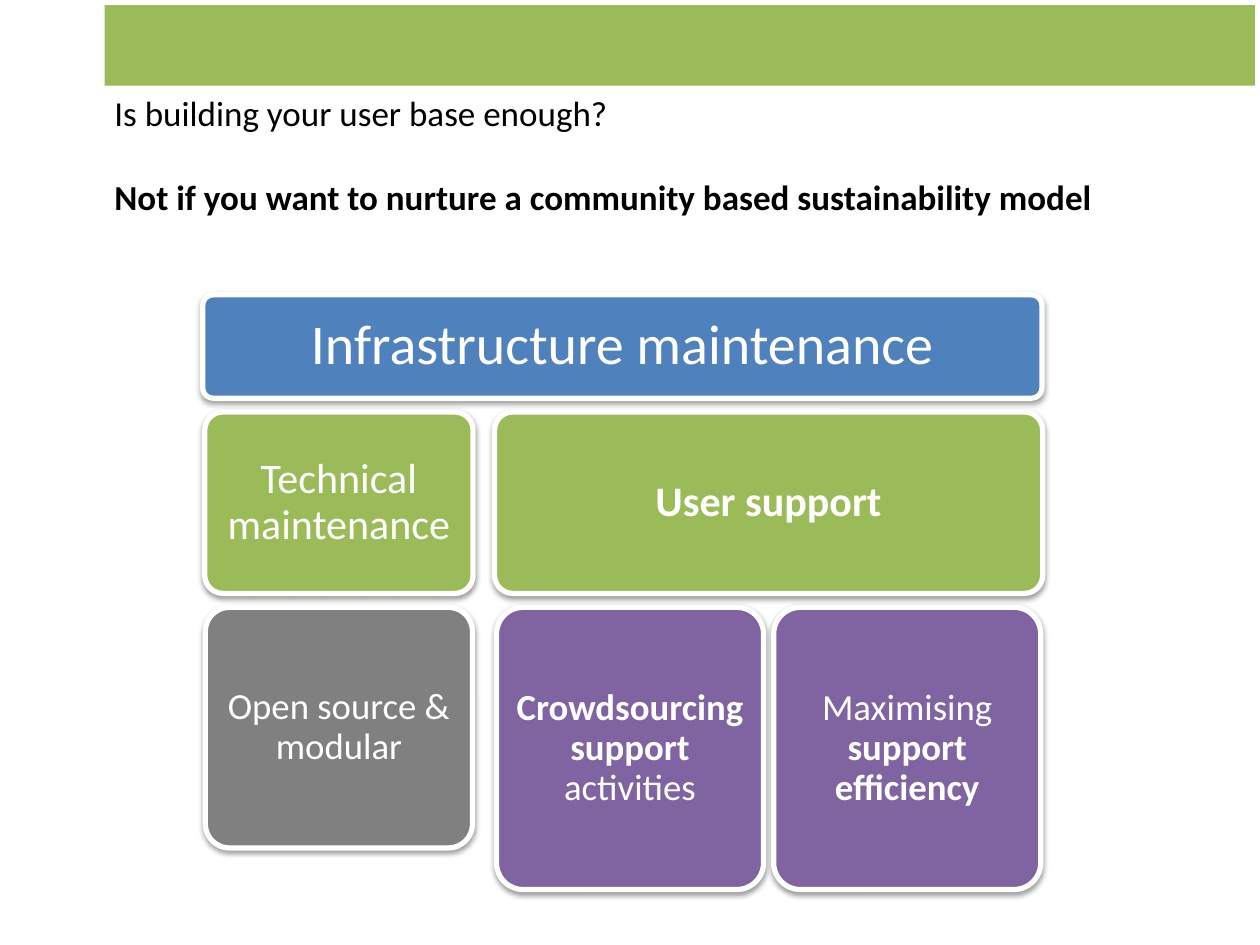
from lxml import etree
from pptx import Presentation
from pptx.dml.color import RGBColor
from pptx.enum.shapes import MSO_SHAPE
from pptx.enum.text import MSO_ANCHOR, MSO_AUTO_SIZE, PP_ALIGN
from pptx.oxml.ns import qn
from pptx.util import Inches, Pt

RECT, ROUND = MSO_SHAPE.RECTANGLE, MSO_SHAPE.ROUNDED_RECTANGLE
MIDDLE, CENTER = MSO_ANCHOR.MIDDLE, PP_ALIGN.CENTER
FONT = "Calibri"
WHITE, BLACK, BLUE, GREEN = "FFFFFF", "000000", "4F81BD", "9BBB59"
GRAY, PURPLE = "808080", "8064A2"

# Content: runs are (text, bold)
BAND = (0.83, 0.04, 9.13, 0.64)
INTRO = [
    ("Is building your user base enough?", False),
    ("Not if you want to nurture a community based sustainability model", True),
]
TOPS = [2.34, 3.27, 4.82]  # top of each tier
SIZES = [32, 24, 21]       # text size of each tier
MID = 4.94                 # centre line of the whole diagram
LEFT, RIGHT = 2.69, 6.1    # centres of the two branches
STEP = 2.2                 # distance between neighbouring leaves

# Tier, centre, width, height, fill, inset, runs
CARDS = [
    (0, MID, 6.66, 0.82, BLUE, 0.14, [("Infrastructure maintenance", False)]),
    (1, LEFT, 2.13, 1.44, GREEN, 0.1, [("Technical maintenance", False)]),
    (2, LEFT, 2.12, 1.91, GRAY, 0.09, [("Open source & modular", False)]),
    (1, RIGHT, 4.35, 1.44, GREEN, 0.1, [("User support", True)]),
    (2, RIGHT - STEP / 2, 2.12, 2.24, PURPLE, 0.09,
     [("Crowdsourcing support", True), (" activities", False)]),
    (2, RIGHT + STEP / 2, 2.12, 2.24, PURPLE, 0.09,
     [("Maximising", False), (" support efficiency", True)]),
]


def color(code):
    return RGBColor.from_string(code)


def add_run(para, text, bold, size, code):
    run = para.add_run()
    run.text = text
    font = run.font
    font.name, font.size, font.bold = FONT, Pt(size), bold
    font.color.rgb = color(code)


def add_box(kind, box, fill):
    shape = slide.shapes.add_shape(kind, *map(Inches, box))
    shape.shadow.inherit = False
    shape.fill.solid()
    shape.fill.fore_color.rgb = color(fill)
    shape.line.fill.background()
    return shape


def add_shade(shape):
    effects = shape._element.spPr.find(qn("a:effectLst"))
    shade = etree.SubElement(effects, qn("a:outerShdw"), blurRad=str(Pt(3.1)),
                             dist=str(Pt(1.6)), dir="5400000", rotWithShape="0")
    tint = etree.SubElement(shade, qn("a:srgbClr"), val=BLACK)
    etree.SubElement(tint, qn("a:alpha"), val="38000")


def add_card(tier, center, width, height, fill, inset, runs):
    card = add_box(ROUND, (center - width / 2, TOPS[tier], width, height), fill)
    card.adjustments[0] = 0.1
    card.line.color.rgb = color(WHITE)
    card.line.width = Pt(3)
    add_shade(card)
    frame = card.text_frame
    frame.word_wrap = True
    frame.vertical_anchor = MIDDLE
    frame.margin_left = frame.margin_right = Inches(inset)
    frame.margin_top = frame.margin_bottom = Inches(inset)
    para = frame.paragraphs[0]
    para.alignment = CENTER
    para.line_spacing = 0.9
    for text, bold in runs:
        add_run(para, text, bold, SIZES[tier], WHITE)


deck = Presentation()
deck.slide_width, deck.slide_height = Inches(10), Inches(7.5)
slide = deck.slides.add_slide(deck.slide_layouts[6])

# Top band
add_box(RECT, BAND, GREEN)

# Diagram
for card in CARDS:
    add_card(*card)

# Question and answer
note = slide.shapes.add_textbox(*map(Inches, (0.81, 0.68, 8.02, 1.11)))
frame = note.text_frame
frame.word_wrap = False
frame.auto_size = MSO_AUTO_SIZE.SHAPE_TO_FIT_TEXT
for i, (text, bold) in enumerate(INTRO):
    para = frame.add_paragraph() if i else frame.paragraphs[0]
    if i:
        para.space_before = Pt(24)
    add_run(para, text, bold, 20, BLACK)

deck.save("out.pptx")
